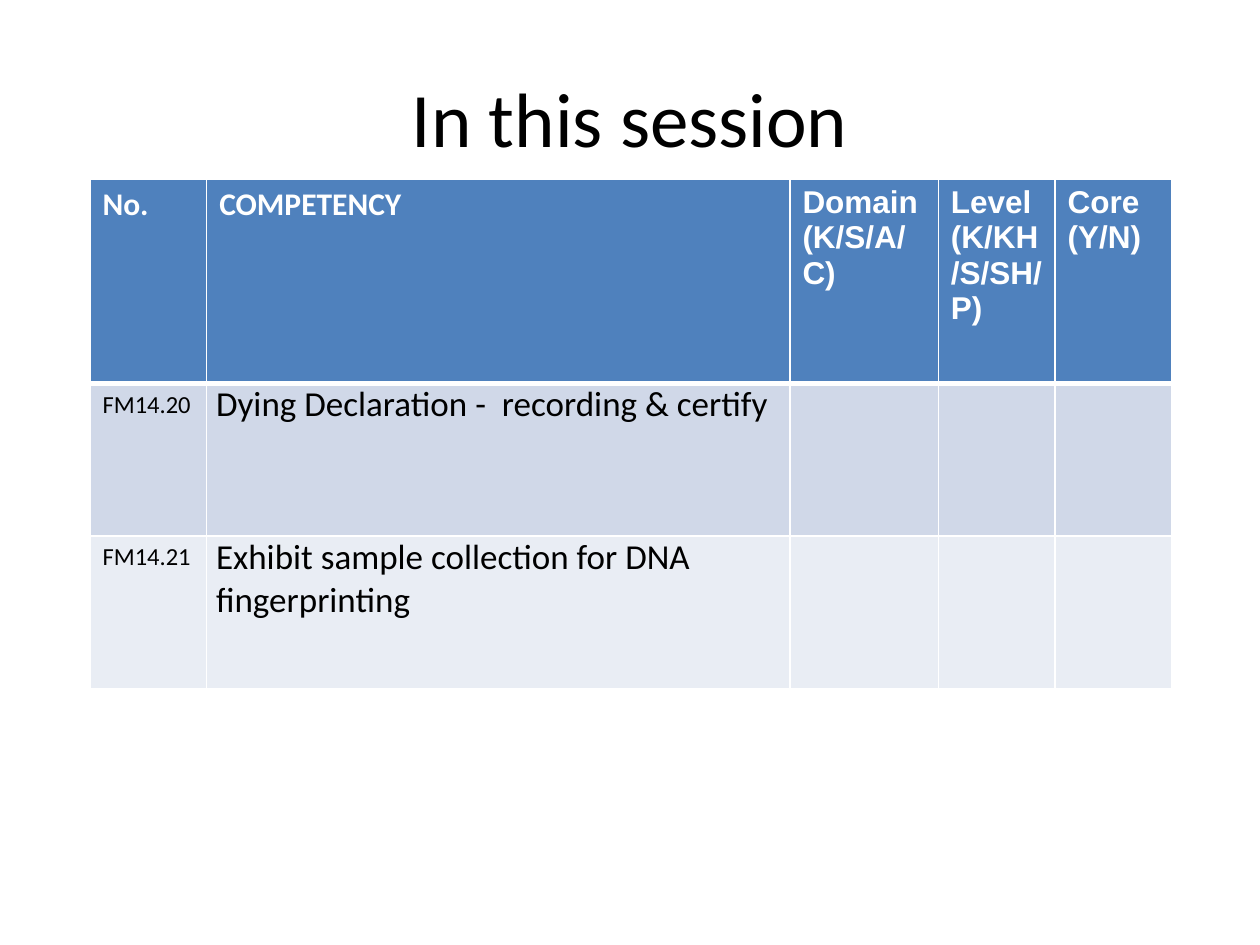
from lxml.etree import SubElement
from pptx import Presentation
from pptx.dml.color import RGBColor
from pptx.enum.text import MSO_ANCHOR, PP_ALIGN
from pptx.oxml.ns import qn
from pptx.util import Pt

# Content
TITLE = "In this session"
HEADERS = ["No.", "COMPETENCY", "Domain (K/S/A/C)", "Level (K/KH/S/SH/P)", "Core (Y/N)"]
HEADER_FONTS = ["Calibri", "Calibri", "Arial", "Arial", "Arial"]
COMPETENCIES = [
    ("FM14.20", "Dying Declaration -  recording & certify"),
    ("FM14.21", "Exhibit sample collection for DNA fingerprinting"),
]

# Format
WHITE = RGBColor(0xFF, 0xFF, 0xFF)
BLACK = RGBColor(0x00, 0x00, 0x00)
HEADER_BLUE = RGBColor(0x4F, 0x81, 0xBD)
BAND_FILLS = [RGBColor(0xD0, 0xD8, 0xE8), RGBColor(0xE9, 0xED, 0xF4)]
TABLE_LEFT, TABLE_TOP = 51.4, 102.2
COLUMN_WIDTHS = [66.7, 333.3, 84.8, 66.7, 66.7]
HEADER_HEIGHT, ROW_HEIGHT = 117, 87.2


def write(frame, text, size, color=BLACK, font="Calibri", bold=False, align=PP_ALIGN.LEFT):
    para = frame.paragraphs[0]
    para.alignment = align
    span = para.add_run()
    span.text = text
    span.font.size = Pt(size)
    span.font.name = font
    span.font.bold = bold
    span.font.color.rgb = color


def style_cell(cell, fill, bottom=1):
    properties = cell._tc.get_or_add_tcPr()
    for side, width in (("L", 1), ("R", 1), ("T", 1), ("B", bottom)):
        line = SubElement(properties, qn(f"a:ln{side}"), w=str(Pt(width)))
        solid = SubElement(line, qn("a:solidFill"))
        SubElement(solid, qn("a:srgbClr"), val=str(WHITE))
    cell.fill.solid()
    cell.fill.fore_color.rgb = fill


deck = Presentation()
deck.slide_width, deck.slide_height = Pt(720), Pt(540)
page = deck.slides.add_slide(deck.slide_layouts[5])

# Title
title = page.shapes.title
title.left, title.top, title.width, title.height = Pt(36), Pt(21.6), Pt(648), Pt(90)
title.text_frame.vertical_anchor = MSO_ANCHOR.MIDDLE
write(title.text_frame, TITLE, 44, align=PP_ALIGN.CENTER)

# Table grid
row_heights = [HEADER_HEIGHT] + [ROW_HEIGHT] * len(COMPETENCIES)
table = page.shapes.add_table(
    len(row_heights), len(HEADERS), Pt(TABLE_LEFT), Pt(TABLE_TOP),
    Pt(sum(COLUMN_WIDTHS)), Pt(sum(row_heights))).table
for column, width in zip(table.columns, COLUMN_WIDTHS):
    column.width = Pt(width)
for row, height in zip(table.rows, row_heights):
    row.height = Pt(height)

# Header row
for cell, header, font in zip(table.rows[0].cells, HEADERS, HEADER_FONTS):
    style_cell(cell, HEADER_BLUE, bottom=3)
    write(cell.text_frame, header, 18, color=WHITE, font=font, bold=True)

# Competency rows
for index, (number, competency) in enumerate(COMPETENCIES):
    cells = list(table.rows[index + 1].cells)
    for cell in cells:
        style_cell(cell, BAND_FILLS[index % 2])
    write(cells[0].text_frame, number, 14)
    cells[1].margin_left = cells[1].margin_right = Pt(5.4)
    cells[1].margin_top = cells[1].margin_bottom = Pt(0)
    write(cells[1].text_frame, competency, 20)

deck.save("out.pptx")
